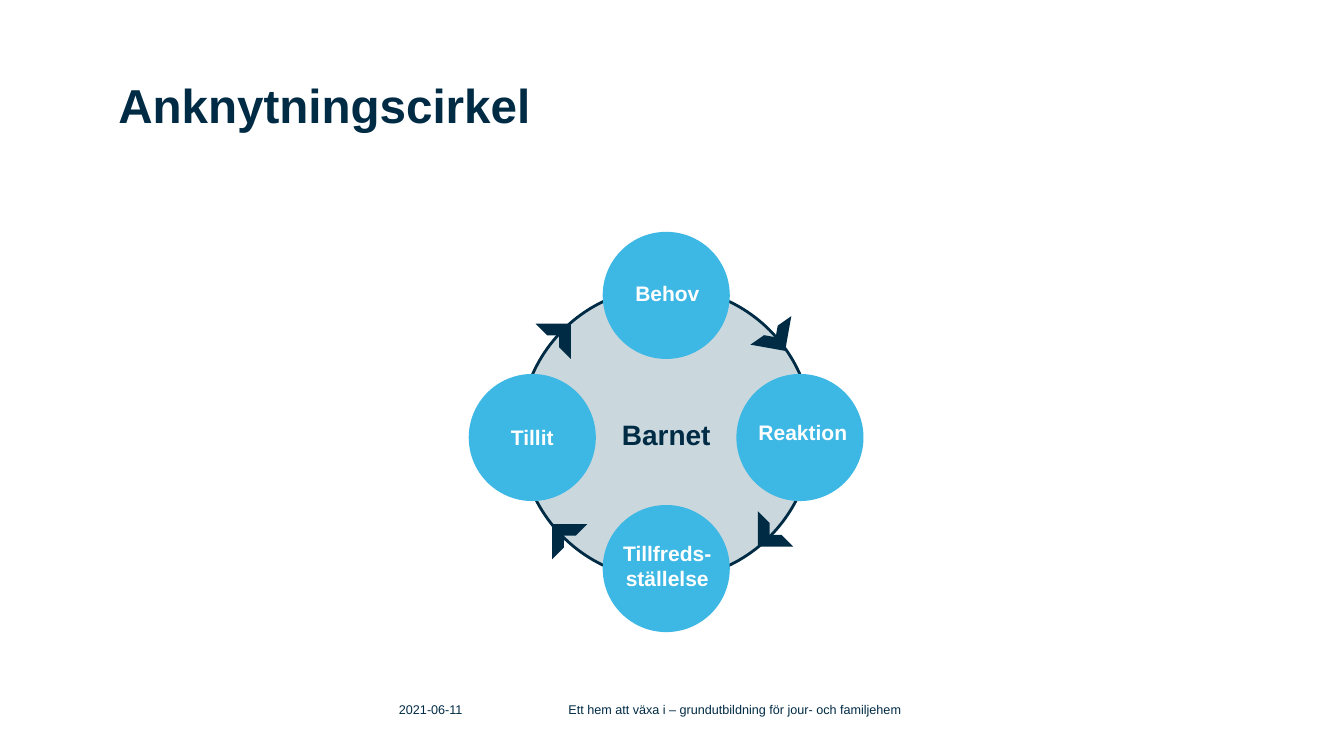
"""Build the attachment circle slide: four stages around the child."""
from dataclasses import dataclass

import pptx
import pptx.dml.color
import pptx.enum.shapes
import pptx.enum.text
import pptx.util

Pt = pptx.util.Pt
SHAPE = pptx.enum.shapes.MSO_SHAPE
ALIGN = pptx.enum.text.PP_ALIGN
ANCHOR = pptx.enum.text.MSO_ANCHOR


@dataclass(frozen=True)
class Theme:
    font: str = "Arial"
    navy: str = "002B45"
    grey: str = "CAD7DD"
    sky: str = "3DB7E4"
    white: str = "FFFFFF"
    title: int = 34
    center: int = 20
    stage: int = 15
    footer: int = 9


THEME = Theme()
STAGE_SIZE = 90.8
ARROW_SIZE = 25.2


def rgb(color):
    return pptx.dml.color.RGBColor.from_string(color)


def add_text(shapes, text, box, size, color, bold=True, align=ALIGN.LEFT,
             anchor=ANCHOR.TOP, inset=(0, 0)):
    tf = shapes.add_textbox(*map(Pt, box)).text_frame
    tf.word_wrap = True
    tf.vertical_anchor = anchor
    tf.margin_left = tf.margin_right = Pt(inset[0])
    tf.margin_top = tf.margin_bottom = Pt(inset[1])
    p = tf.paragraphs[0]
    p.text = text
    p.alignment = align
    p.font.name = THEME.font
    p.font.size = Pt(size)
    p.font.bold = bold
    p.font.color.rgb = rgb(color)


def add_label(shapes, text, box, size, color):
    add_text(shapes, text, box, size, color, align=ALIGN.CENTER, inset=(7.2, 3.6))


def add_footer(shapes, text, left, width):
    add_text(shapes, text, (left, 496.1, width, 20.9), THEME.footer, THEME.navy,
             bold=False, anchor=ANCHOR.MIDDLE)


def add_filled(shapes, kind, box, fill, line=None, rotation=0):
    sp = shapes.add_shape(kind, *map(Pt, box))
    sp.shadow.inherit = False
    sp.rotation = rotation
    sp.fill.solid()
    sp.fill.fore_color.rgb = rgb(fill)
    if line:
        sp.line.color.rgb = rgb(line)
        sp.line.width = Pt(2)
    else:
        sp.line.fill.background()


def add_stage(shapes, text, left, top, label_box):
    group = shapes.add_group_shape().shapes
    add_filled(group, SHAPE.OVAL, (left, top, STAGE_SIZE, STAGE_SIZE), THEME.sky)
    add_label(group, text, label_box, THEME.stage, THEME.white)


def main():
    prs = pptx.Presentation()
    prs.slide_width, prs.slide_height = Pt(960), Pt(540)
    shapes = prs.slides.add_slide(prs.slide_layouts[6]).shapes

    add_text(shapes, "Anknytningscirkel", (84.6, 54, 717, 102), THEME.title, THEME.navy)
    add_footer(shapes, "2021-06-11", 285, 121)

    add_filled(shapes, SHAPE.OVAL, (371.5, 205.2, 208.8, 208.8), THEME.grey, THEME.navy)
    add_label(shapes, "Barnet", (371.5, 294.5, 208.8, 35.3), THEME.center, THEME.navy)

    arrows = [(382.5, 231.2, 90), (538, 223.4, 190.1), (541.3, 365.2, 270), (394.4, 374.3, 0)]
    for left, top, rotation in arrows:
        add_filled(shapes, SHAPE.HALF_FRAME, (left, top, ARROW_SIZE, ARROW_SIZE),
                   THEME.navy, rotation=rotation)

    stages = [
        ("Behov", 430.5, 165.6, (431.3, 196.6, 90.8, 28)),
        ("Tillfreds- ställelse", 430.5, 360.7, (427.7, 382.3, 97.9, 48.2)),
        ("Reaktion", 526, 267.1, (526.3, 296, 94.3, 28)),
        ("Tillit", 334.8, 267.1, (334.8, 299.5, 90.8, 28)),
    ]
    for stage in stages:
        add_stage(shapes, *stage)

    add_footer(shapes, "Ett hem att växa i – grundutbildning för jour- och familjehem", 406, 304)
    prs.save("out.pptx")


if __name__ == "__main__":
    main()
